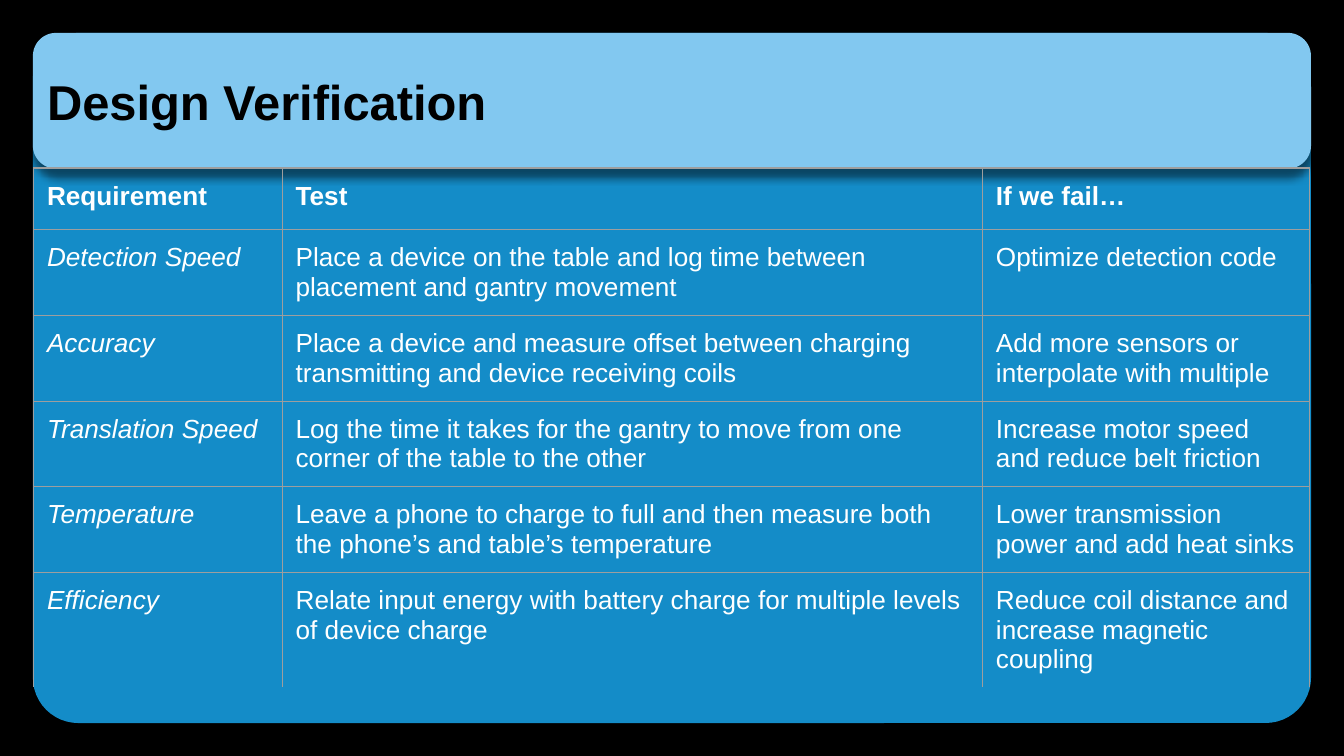
from dataclasses import dataclass

from lxml.etree import SubElement
from pptx import Presentation
from pptx.dml.color import RGBColor
from pptx.enum.shapes import MSO_SHAPE as Preset
from pptx.enum.text import MSO_ANCHOR as Anchor, MSO_AUTO_SIZE as AutoSize, PP_ALIGN as Align
from pptx.oxml.ns import qn
from pptx.util import Pt


@dataclass(frozen=True)
class Theme:
    font: str = "Arial"
    title_size: float = 26.2
    body_size: float = 14
    background: str = "000000"
    panel: str = "148CC8"
    banner: str = "82C8F0"
    title: str = "000000"
    body: str = "FFFFFF"
    rule: str = "9E9E9E"
    shadow: str = "000000"
    line_width: float = 0.75
    inset: float = 7.2


@dataclass(frozen=True)
class Box:
    left: float
    top: float
    width: float
    height: float

    def lengths(self):
        return Pt(self.left), Pt(self.top), Pt(self.width), Pt(self.height)


THEME = Theme()
MARGIN = 18
BANNER_HEIGHT = 72
COLUMN_WIDTHS = (133.2, 375.2, 175.2)
ROW_HEIGHT = 33.12
ROWS = (
    ("Requirement", "Test", "If we fail…"),
    ("Detection Speed",
     "Place a device on the table and log time between placement and gantry movement",
     "Optimize detection code"),
    ("Accuracy",
     "Place a device and measure offset between charging transmitting and device receiving coils",
     "Add more sensors or interpolate with multiple"),
    ("Translation Speed",
     "Log the time it takes for the gantry to move from one corner of the table to the other",
     "Increase motor speed and reduce belt friction"),
    ("Temperature",
     "Leave a phone to charge to full and then measure both the phone’s and table’s temperature",
     "Lower transmission power and add heat sinks"),
    ("Efficiency",
     "Relate input energy with battery charge for multiple levels of device charge",
     "Reduce coil distance and increase magnetic coupling"),
)


def rgb(color):
    return RGBColor.from_string(color)


def style_font(font, size, color, bold=False, italic=False):
    font.name, font.size = THEME.font, Pt(size)
    font.color.rgb = rgb(color)
    font.bold, font.italic = bold, italic


def set_insets(target):
    """Give a text frame or table cell the same inset on every side."""
    target.margin_left = target.margin_right = Pt(THEME.inset)
    target.margin_top = target.margin_bottom = Pt(THEME.inset)


def add_rounded_box(slide, box, color, rounding):
    shape = slide.shapes.add_shape(Preset.ROUNDED_RECTANGLE, *box.lengths())
    shape.adjustments[0] = rounding
    shape.fill.solid()
    shape.fill.fore_color.rgb = rgb(color)
    shape.line.color.rgb = rgb(color)
    shape.line.width = Pt(THEME.line_width)
    shape.shadow.inherit = False
    return shape


def add_drop_shadow(shape):
    effects = shape.element.spPr.find(qn("a:effectLst"))
    shadow = SubElement(effects, qn("a:outerShdw"), blurRad=str(Pt(4.5)), dist=str(Pt(4.5)),
                        dir="5400000", algn="bl", rotWithShape="0")
    color = SubElement(shadow, qn("a:srgbClr"), val=THEME.shadow)
    SubElement(color, qn("a:alpha"), val="50000")


def add_banner(slide, box, text):
    add_drop_shadow(add_rounded_box(slide, box, THEME.banner, 0.167))
    title = slide.shapes.title
    slide.shapes.element.append(title.element)  # bring the title in front of the banner
    title.left, title.top, title.width, title.height = box.lengths()
    frame = title.text_frame
    frame.text = text
    frame.word_wrap = True
    frame.auto_size = AutoSize.NONE
    frame.vertical_anchor = Anchor.MIDDLE
    set_insets(frame)
    paragraph = frame.paragraphs[0]
    paragraph.alignment = Align.LEFT
    style_font(paragraph.font, THEME.title_size, THEME.title, bold=True)


def add_borders(cell, open_bottom):
    properties = cell._tc.get_or_add_tcPr()
    for side in ("lnL", "lnR", "lnT", "lnB"):
        line = SubElement(properties, qn(f"a:{side}"), w=str(Pt(THEME.line_width)))
        if side == "lnB" and open_bottom:
            SubElement(line, qn("a:noFill"))
        else:
            fill = SubElement(line, qn("a:solidFill"))
            SubElement(fill, qn("a:srgbClr"), val=THEME.rule)


def add_test_table(slide, box, rows):
    table = slide.shapes.add_table(len(rows), len(COLUMN_WIDTHS), *box.lengths()).table
    table.first_row = table.horz_banding = False
    for column, width in zip(table.columns, COLUMN_WIDTHS):
        column.width = Pt(width)
    for row_index, texts in enumerate(rows):
        table.rows[row_index].height = Pt(box.height / len(rows))
        is_header = row_index == 0
        for column_index, text in enumerate(texts):
            cell = table.cell(row_index, column_index)
            cell.text = text
            set_insets(cell)
            add_borders(cell, open_bottom=row_index == len(rows) - 1)
            cell.fill.background()
            style_font(cell.text_frame.paragraphs[0].font, THEME.body_size, THEME.body,
                       bold=is_header, italic=column_index == 0 and not is_header)


def add_verification_slide(presentation, box):
    slide = presentation.slides.add_slide(presentation.slide_layouts[5])
    slide.background.fill.solid()
    slide.background.fill.fore_color.rgb = rgb(THEME.background)
    add_rounded_box(slide, box, THEME.panel, 0.065)
    add_banner(slide, Box(box.left, box.top, box.width, BANNER_HEIGHT), "Design Verification")
    add_test_table(slide, Box(box.left, box.top + BANNER_HEIGHT, sum(COLUMN_WIDTHS),
                              ROW_HEIGHT * len(ROWS)), ROWS)


def main():
    presentation = Presentation()
    presentation.slide_width, presentation.slide_height = Pt(720), Pt(405)
    add_verification_slide(presentation, Box(MARGIN, MARGIN, 720 - 2 * MARGIN, 405 - 2 * MARGIN))
    presentation.save("out.pptx")


if __name__ == "__main__":
    main()
